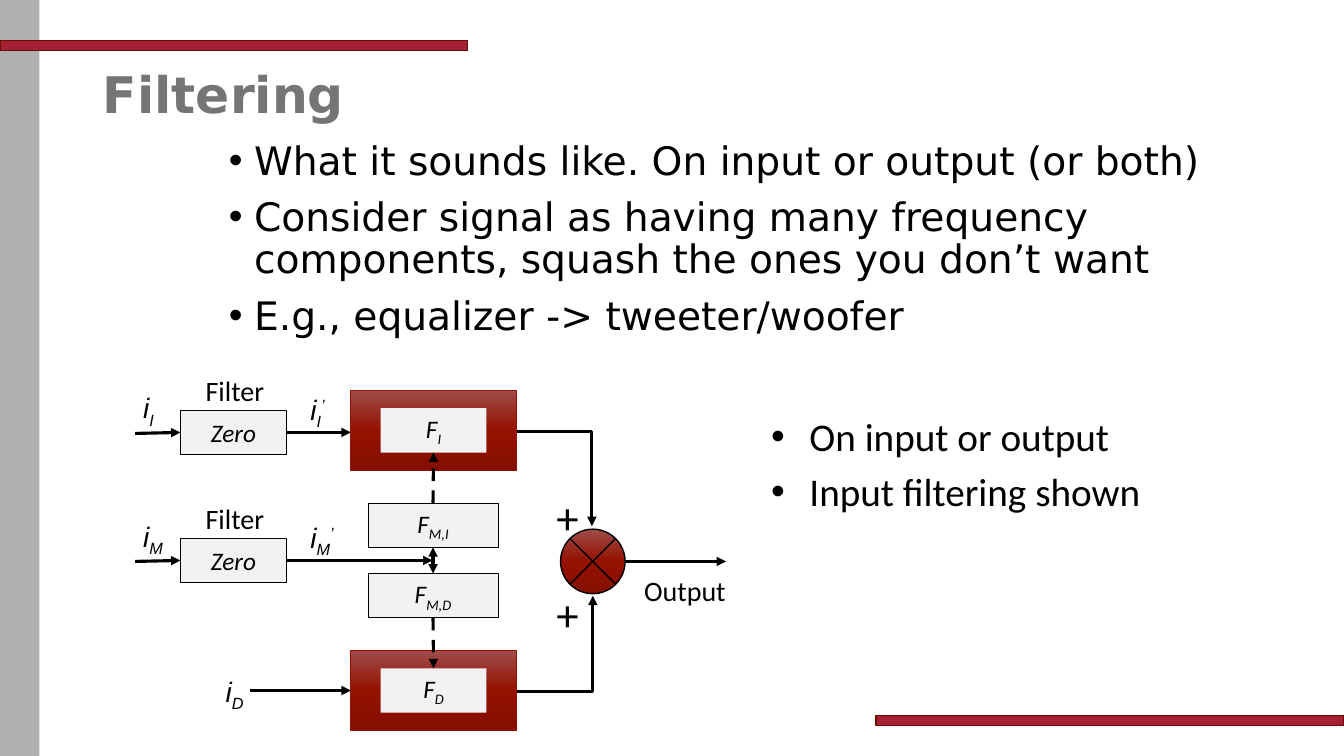
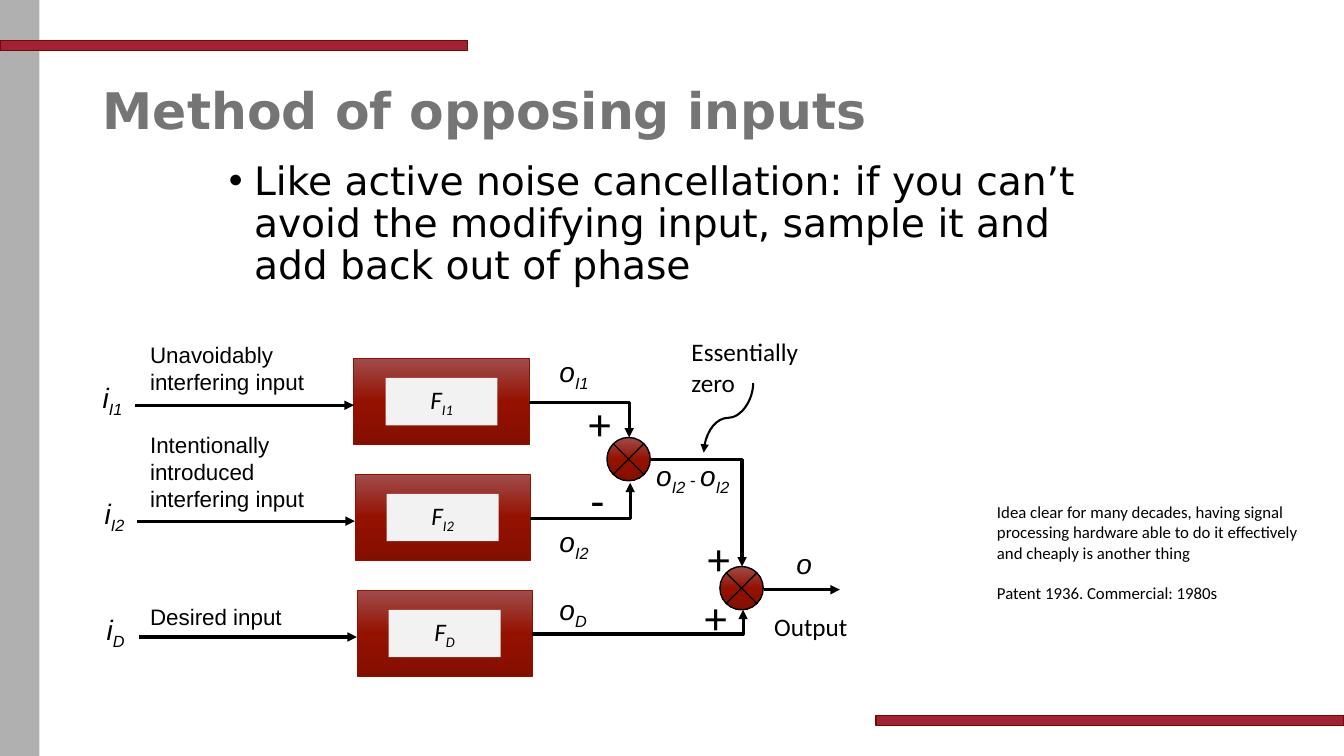
import copy
import lxml.etree
import pptx
import pptx.dml.color
import pptx.enum.dml
import pptx.enum.shapes
import pptx.enum.text
import pptx.oxml.ns
import pptx.util

RGBColor = pptx.dml.color.RGBColor
Inches = pptx.util.Inches
Pt = pptx.util.Pt
SHAPE = pptx.enum.shapes.MSO_SHAPE
LINK = pptx.enum.shapes.MSO_CONNECTOR
ALIGN = pptx.enum.text.PP_ALIGN
ANCHOR = pptx.enum.text.MSO_ANCHOR
FIT = pptx.enum.text.MSO_AUTO_SIZE
qn = pptx.oxml.ns.qn

BLACK = RGBColor(0x00, 0x00, 0x00)
GRAY = RGBColor(0x75, 0x75, 0x75)
SIDE = RGBColor(0xB0, 0xB0, 0xB0)
PALE = RGBColor(0xF2, 0xF2, 0xF2)
BAND = RGBColor(0xA3, 0x20, 0x35)
EDGE = RGBColor(0x6D, 0x0D, 0x00)
ROSE = RGBColor(0xA0, 0x4C, 0x4B)
RED = RGBColor(0x94, 0x11, 0x00)
DARK = RGBColor(0x84, 0x0F, 0x00)
BLEND = ((0, ROSE), (0.5, RED), (1, DARK))

HEAD = "DejaVu Sans"
TEXT = "Calibri"
SIGN = "Arial"


class Deck:
    def __init__(self):
        self.show = pptx.Presentation()
        self.show.slide_width = Inches(13.33)
        self.show.slide_height = Inches(7.5)
        self.layout = self.show.slide_layouts[1]
        self.slide = None

    def frame(self):
        bars = [
            self.shape(SHAPE.RECTANGLE, 0, 0, 0.39, 7.5, SIDE),
            self.shape(SHAPE.RECTANGLE, 0, 0.4, 4.64, 0.1, BAND, EDGE, 1),
            self.shape(SHAPE.RECTANGLE, 8.69, 7.1, 4.64, 0.1, BAND, EDGE, 1),
        ]
        for spot, bar in enumerate(bars, 2):
            bar._element.nvSpPr.cNvPr.set("id", str(spot + 20))
            self.layout.shapes._spTree.insert(spot, bar._element)

    def page(self, title, top, items, box):
        first = self.slide is None
        self.slide = self.show.slides.add_slide(self.layout)
        if first:
            self.frame()
        head = self.slide.shapes.title
        self.place(head, 0.92, top, 11.5, 1.45)
        head.text_frame.vertical_anchor = ANCHOR.MIDDLE
        self.letter(head.text_frame, title, 36, HEAD, GRAY, bold=True)
        head.text_frame.paragraphs[0].alignment = ALIGN.LEFT
        head.text_frame.paragraphs[0].line_spacing = 0.9
        body = self.slide.placeholders[1]
        self.place(body, *box)
        self.bullets(body.text_frame, items, HEAD, 0.25, 10, 0.9)

    def place(self, holder, left, top, wide, high):
        holder.left, holder.top = Inches(left), Inches(top)
        holder.width, holder.height = Inches(wide), Inches(high)
        holder.text_frame.auto_size = FIT.NONE

    def style(self, run, size, face, color=BLACK, slant=False, bold=False):
        run.font.size = Pt(size)
        run.font.name = face
        run.font.color.rgb = color
        run.font.italic = slant
        run.font.bold = bold

    def letter(self, frame, text, size, face, color=BLACK, slant=False, bold=False, subs=()):
        frame.text = text
        for part, base, *small in subs:
            run = frame.paragraphs[0].add_run()
            run.text = part
            self.style(run, small[0] if small else size, face, color, slant, bold)
            run._r.get_or_add_rPr().set("baseline", str(base * 1000))
        for para in frame.paragraphs:
            for run in para.runs[:1]:
                self.style(run, size, face, color, slant, bold)

    def bullets(self, frame, items, face, indent, gap, pitch=1.0):
        frame.text = "\n".join(items)
        frame.word_wrap = True
        for spot, para in enumerate(frame.paragraphs):
            props = para._p.get_or_add_pPr()
            props.set("marL", str(Inches(indent)))
            props.set("indent", str(-Inches(indent)))
            lxml.etree.SubElement(props, qn("a:buFont")).set("typeface", SIGN)
            lxml.etree.SubElement(props, qn("a:buChar")).set("char", "•")
            para.line_spacing = pitch
            para.space_before = Pt(gap if spot else 0)
            self.style(para.runs[0], 28, face)

    def label(self, text, left, top, wide, high=0.44, size=20, face=TEXT,
              slant=False, subs=(), wrap=False):
        box = self.slide.shapes.add_textbox(Inches(left), Inches(top), Inches(wide), Inches(high))
        box.text_frame.word_wrap = wrap
        box.text_frame.auto_size = FIT.SHAPE_TO_FIT_TEXT
        self.letter(box.text_frame, text, size, face, slant=slant, subs=subs)
        return box

    def signal(self, text, left, top, wide, *subs):
        self.label(text, left, top, wide, face=SIGN, slant=True, subs=subs)

    def mark(self, text, left, top, wide=0.43):
        self.label(text, left, top, wide, 0.64, 32)

    def shape(self, kind, left, top, wide, high, fill, edge=None, weight=0.5):
        form = self.slide.shapes.add_shape(
            kind, Inches(left), Inches(top), Inches(wide), Inches(high))
        form.shadow.inherit = False
        if fill is BLEND:
            form.fill.gradient()
            form.fill.gradient_angle = 270
            stops = form._element.spPr.find(".//" + qn("a:gsLst"))
            stops.append(copy.deepcopy(stops[0]))
            for stop, (place, color) in zip(form.fill.gradient_stops, BLEND):
                stop.position = place
                stop.color.rgb = color
        else:
            form.fill.solid()
            form.fill.fore_color.rgb = fill
        if edge is None:
            form.line.fill.background()
        else:
            form.line.color.rgb = edge
            form.line.width = Pt(weight)
        return form

    def plate(self, text, left, top, wide, high, edge=None, subs=()):
        form = self.shape(SHAPE.RECTANGLE, left, top, wide, high, PALE, edge)
        form.text_frame.vertical_anchor = ANCHOR.MIDDLE
        self.letter(form.text_frame, text, 18, TEXT, slant=True, subs=subs)
        form.text_frame.paragraphs[0].alignment = ALIGN.CENTER
        return form

    def block(self, sub, left, top, wide, high):
        form = self.shape(SHAPE.RECTANGLE, left, top, wide, high, BLEND, RED)
        core, tall = round(wide * 0.64, 2), round(high * 0.55, 2)
        plate = self.plate("F", left + (wide - core) / 2, top + (high - tall) / 2,
                           core, tall, subs=[(sub, -25)])
        return form, plate

    def joint(self, left, top, size):
        self.shape(SHAPE.FLOWCHART_SUMMING_JUNCTION, left, top, size, size, BLEND, BLACK, 1)

    def arrow(self, start, end, kind=LINK.STRAIGHT, weight=2.25, dash=False, both=False):
        ends = []
        for point in (start, end):
            joined = not isinstance(point[0], (int, float))
            ends.append((0, 0) if joined else [Inches(value) for value in point])
        link = self.slide.shapes.add_connector(kind, *ends[0], *ends[1])
        for point, join in ((start, link.begin_connect), (end, link.end_connect)):
            if not isinstance(point[0], (int, float)):
                join(*point)
        link.line.color.rgb = BLACK
        link.line.width = Pt(weight)
        if dash:
            link.line.dash_style = pptx.enum.dml.MSO_LINE.DASH
        props = link._element.spPr
        line = props.find(qn("a:ln"))
        for name in ("a:headEnd", "a:tailEnd")[0 if both else 1:]:
            lxml.etree.SubElement(line, qn(name)).set("type", "triangle")
        lxml.etree.SubElement(props, qn("a:effectLst"))
        return link

    def elbow(self, start, end):
        link = self.arrow(start, end, LINK.ELBOW)
        shape = link._element.spPr.find(qn("a:prstGeom"))
        guides = shape.find(qn("a:avLst"))
        if guides is None:
            guides = lxml.etree.SubElement(shape, qn("a:avLst"))
        guide = lxml.etree.SubElement(guides, qn("a:gd"))
        guide.set("name", "adj1")
        guide.set("fmla", "val 100000")

    def curve(self, start, end):
        link = self.arrow(start, end, LINK.CURVE, 1.5)
        link._element.spPr.find(qn("a:xfrm")).set("rot", "5400000")


def filters(deck):
    deck.page("Filtering", 0.24, [
        "What it sounds like. On input or output (or both)",
        "Consider signal as having many frequency components, squash the ones you don’t want",
        "E.g., equalizer -> tweeter/woofer",
    ], (2.17, 1.35, 11.17, 4.95))
    deck.elbow((5.12, 6.86), (5.88, 5.91))
    deck.elbow((5.12, 4.28), (5.87, 5.22))
    upper = deck.block("I", 3.48, 3.87, 1.64, 0.8)[1]
    block, lower = deck.block("D", 3.48, 6.45, 1.64, 0.8)
    high, low = [deck.plate("F", 3.65, top, 1.29, 0.44, BLACK, [(sub, -25)])
                 for sub, top in (("M,I", 4.99), ("M,D", 5.69))]
    deck.arrow((high, 0), (upper, 2), dash=True)
    deck.arrow((low, 2), (lower, 0), dash=True)
    deck.arrow((high, 2), (low, 0), both=True)
    deck.arrow((2.48, 6.85), (block, 1))
    deck.signal("i", 2.14, 6.64, 0.4, ("D", -25))
    for sub, top, wide, tip in (("I", 4.07, 0.32, 3.48), ("M", 5.34, 0.42, 4.29)):
        zero = deck.plate("Zero", 1.79, top, 1.05, 0.44, BLACK)
        deck.label("Filter", 1.94, top - 0.41, 0.79)
        deck.arrow((1.34, top + 0.23), (zero, 1))
        deck.arrow((zero, 3), (tip, top + 0.22))
        deck.signal("i", 1.32, top - 0.24, wide, (sub, -25))
        deck.signal("i", 2.98, top - 0.23, wide + 0.04, (sub, -25), ("’", 30))
    deck.joint(5.56, 5.25, 0.64)
    for top in (4.81, 5.77):
        deck.mark("+", 5.42, top)
    deck.arrow((6.2, 5.57), (7.2, 5.57))
    deck.label("Output", 6.29, 5.64, 1.02)
    notes = deck.label("", 7.55, 4.04, 3.87, 1.81)
    notes.text_frame.auto_size = FIT.NONE
    deck.bullets(notes.text_frame, ["On input or output", "Input filtering shown"],
                 TEXT, 0.38, 5.6)


def inputs(deck):
    deck.page("Method of opposing inputs", 0.4, [
        "Like active noise cancellation: if you can’t avoid the modifying input, "
        "sample it and add back out of phase",
    ], (2.17, 1.55, 9, 4.95))
    note = deck.label(
        "Idea clear for many decades, having signal processing hardware able to do it "
        "effectively and cheaply is another thing\nPatent 1936. Commercial: 1980s",
        9.79, 4.93, 3.27, 1.11, 12, wrap=True)
    note.text_frame.paragraphs[1].space_before = Pt(14.6)
    rows = (
        ("I1", 3.51, "Unavoidably interfering input", 3.34, 0.64, 3.47),
        ("I2", 3.52, "Intentionally introduced interfering input", 4.23, 0.91, 5.15),
        ("D", 3.54, "Desired input", 5.93, 0.37, 5.83),
    )
    for spot, (sub, left, name, cap, high, out) in enumerate(rows):
        top, shift = 3.56 + 1.15 * spot, 0.02 * spot
        deck.block(sub, left, top, 1.74, 0.85)
        deck.arrow((1.34 + shift, top + 0.46), (left, top + 0.46))
        deck.signal("i", 0.92 + shift, top + 0.17, 0.42, (sub, -25))
        deck.signal("o", 5.45, out, 0.51, (sub, -25))
        deck.label(name, 1.39, cap, 2.02, high, 16, SIGN, wrap=True)
    deck.elbow((5.25, 3.99), (6.24, 4.34))
    deck.elbow((5.26, 5.14), (6.25, 4.79))
    deck.elbow((6.45, 4.56), (7.36, 5.62))
    deck.elbow((5.28, 6.29), (7.37, 6.05))
    deck.joint(6.02, 4.34, 0.43)
    deck.joint(7.14, 5.62, 0.43)
    for left, top in ((5.74, 3.88), (6.92, 5.22), (6.89, 5.8)):
        deck.mark("+", left, top)
    deck.mark("-", 5.76, 4.64, 0.34)
    deck.arrow((7.58, 5.85), (8.33, 5.85))
    deck.label("Output", 7.58, 6.02, 0.94, 0.4, 18)
    deck.signal("o", 7.8, 5.37, 0.36)
    deck.signal("o", 6.41, 4.5, 1.01, ("I2 ", -25), ("- ", 0, 12), ("o", 0), ("I2", -25))
    deck.curve((6.88, 3.9), (7.57, 4.39))
    deck.label("Essentially\nzero", 6.76, 3.29, 1.27, 0.71, 18)


def main():
    deck = Deck()
    filters(deck)
    inputs(deck)
    deck.show.save("out.pptx")


if __name__ == "__main__":
    main()
